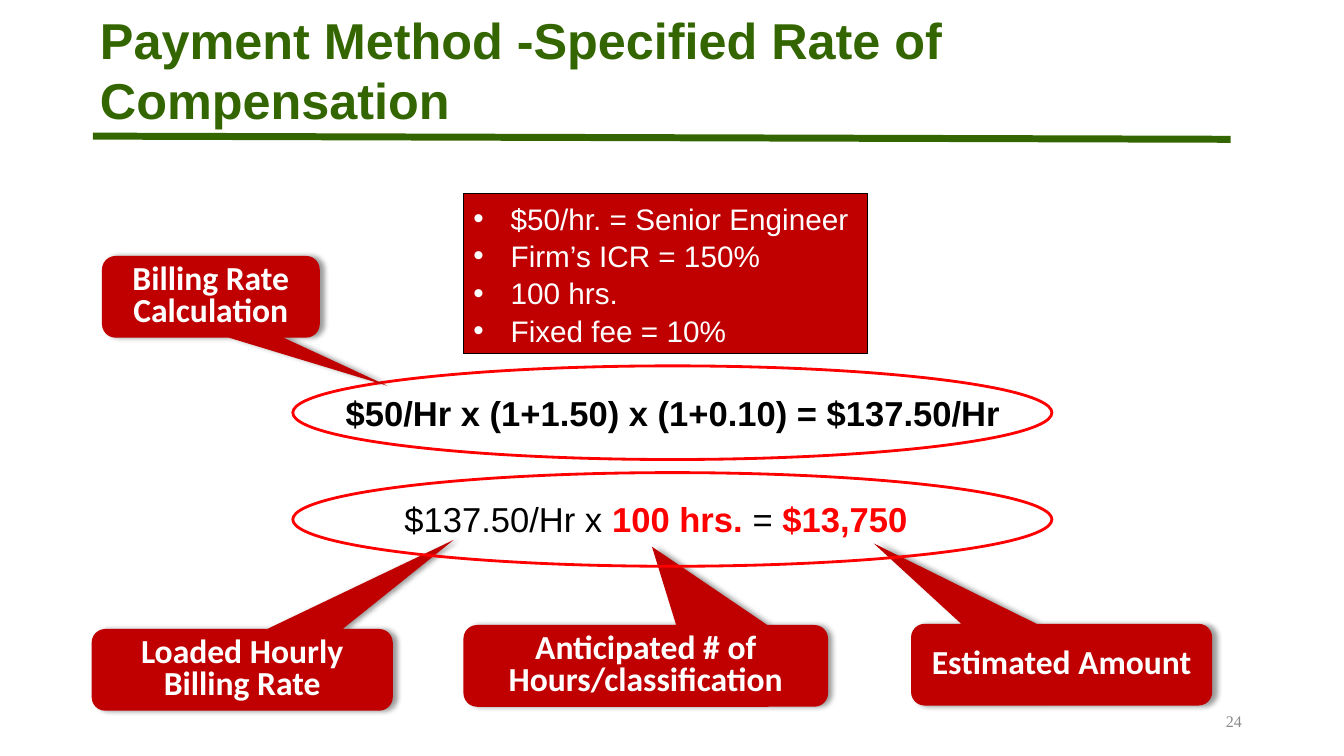
from lxml import etree
from pptx import Presentation
from pptx.dml.color import RGBColor
from pptx.enum.shapes import MSO_CONNECTOR, MSO_SHAPE
from pptx.enum.text import MSO_ANCHOR, MSO_AUTO_SIZE, PP_ALIGN
from pptx.oxml import parse_xml
from pptx.oxml.ns import nsdecls, qn
from pptx.util import Cm, Pt

COLORS = {"green": "336600", "dark red": "C00000", "red": "FF0000",
          "black": "000000", "white": "FFFFFF", "gray": "898989"}


def color(name):
    return RGBColor.from_string(COLORS[name])


def add_span(para, text, size, ink, bold=False, face="Arial"):
    """Add one formatted run to a paragraph."""
    span = para.add_run()
    span.text = text
    span.font.name = face
    span.font.size = Pt(size)
    span.font.bold = bold
    span.font.color.rgb = color(ink)


deck = Presentation()
deck.slide_width, deck.slide_height = Cm(33.87), Cm(19.05)
page = deck.slides.add_slide(deck.slide_layouts[5])
shapes = page.shapes

# Title and the rule below it
rule = shapes.add_connector(MSO_CONNECTOR.STRAIGHT, Cm(2.34), Cm(3.43), Cm(31.01), Cm(3.51))
rule.line.color.rgb = color("green")
rule.line.width = Pt(5)
etree.SubElement(rule._element.spPr, qn("a:effectLst"))

title = shapes.title
title.left, title.top, title.width, title.height = Cm(2.29), Cm(0.1), Cm(28.27), Cm(3.3)
frame = title.text_frame
frame.auto_size = MSO_AUTO_SIZE.NONE
frame.vertical_anchor = MSO_ANCHOR.MIDDLE
frame.margin_left = frame.margin_right = Cm(0.23)
frame.margin_top = frame.margin_bottom = Cm(0.1)
frame.paragraphs[0].alignment = PP_ALIGN.LEFT
add_span(frame.paragraphs[0], "Payment Method -Specified Rate of Compensation", 36, "green", True)

# Right-aligned texts: page number and the two formulas
texts = [
    (23.93, 17.65, 7.62, 1.02, [("24", 11.5, "gray", False, "Times New Roman")]),
    (9.91, 12.42, 13.21, 1.32, [("$137.50/Hr x ", 24.7, "black"),
                                ("100 hrs. ", 24.7, "red", True),
                                ("= ", 24.7, "black"),
                                ("$13,750", 24.7, "red", True)]),
    (7.39, 9.73, 18.08, 1.32,
     [("$50/Hr x (1+1.50) x (1+0.10) = $137.50/Hr", 24.7, "black", True)]),
]
for left, top, width, height, spans in texts:
    box = shapes.add_textbox(Cm(left), Cm(top), Cm(width), Cm(height))
    frame = box.text_frame
    frame.word_wrap = True
    frame.vertical_anchor = MSO_ANCHOR.MIDDLE
    frame.paragraphs[0].alignment = PP_ALIGN.RIGHT
    for span in spans:
        add_span(frame.paragraphs[0], *span)

# Assumptions
assumptions = shapes.add_shape(MSO_SHAPE.RECTANGLE, Cm(11.68), Cm(4.88), Cm(10.19), Cm(4.04))
assumptions.shadow.inherit = False
assumptions.fill.solid()
assumptions.fill.fore_color.rgb = color("dark red")
assumptions.line.color.rgb = color("black")
assumptions.line.width = Pt(0.75)
frame = assumptions.text_frame
frame.word_wrap = True
frame.vertical_anchor = MSO_ANCHOR.TOP
items = ["$50/hr. = Senior Engineer", "Firm’s ICR = 150%", "100 hrs.", "Fixed fee = 10%"]
for index, item in enumerate(items):
    para = frame.add_paragraph() if index else frame.paragraphs[0]
    para.alignment = PP_ALIGN.LEFT
    para.line_spacing = 1.05
    props = para._p.get_or_add_pPr()
    props.set("marL", str(Cm(0.94)))
    props.set("indent", str(-Cm(0.94)))
    etree.SubElement(props, qn("a:buFont")).set("typeface", "Arial")
    etree.SubElement(props, qn("a:buChar")).set("char", "•")
    add_span(para, item, 21.2, "white")

# Ovals around the formulas, with the callouts layered between them
ovals = [shapes.add_shape(MSO_SHAPE.OVAL, Cm(7.38), Cm(top), Cm(19.13), Cm(2.36))
         for top in (9.22, 11.91)]
for oval in ovals:
    oval.shadow.inherit = False
    oval.fill.background()
    oval.line.color.rgb = color("red")
    oval.line.width = Pt(2)

callouts = [
    (11.68, 15.75, 9.19, (0.017, -1.458), ["Anticipated # of Hours/classification"]),
    (2.31, 15.85, 7.59, (0.702, -1.589), ["Loaded Hourly Billing Rate"]),
    (22.96, 15.72, 7.59, (-0.624, -1.484), ["Estimated Amount"]),
    (2.57, 6.45, 5.49, (0.81, 1.088), ["Billing Rate", "Calculation"]),
]
for left, top, width, tip, lines in callouts:
    callout = shapes.add_shape(MSO_SHAPE.ROUNDED_RECTANGULAR_CALLOUT,
                               Cm(left), Cm(top), Cm(width), Cm(2.06))
    callout.adjustments[0], callout.adjustments[1] = tip
    callout.fill.solid()
    callout.fill.fore_color.rgb = color("dark red")
    callout.line.fill.background()
    callout._element.spPr.append(parse_xml(
        f'<a:effectLst {nsdecls("a")}><a:outerShdw blurRad="{Pt(4)}" dist="{Pt(3)}" dir="0">'
        f'<a:srgbClr val="{COLORS["black"]}"><a:alpha val="40000"/></a:srgbClr>'
        '</a:outerShdw></a:effectLst>'))
    frame = callout.text_frame
    frame.word_wrap = True
    frame.vertical_anchor = MSO_ANCHOR.MIDDLE
    for index, line in enumerate(lines):
        para = frame.add_paragraph() if index else frame.paragraphs[0]
        para.alignment = PP_ALIGN.CENTER
        para.line_spacing = 0.8
        add_span(para, line, 24, "white", True, "Calibri")

lower_oval = ovals[1]._element
lower_oval.getparent().append(lower_oval)

deck.save("out.pptx")
